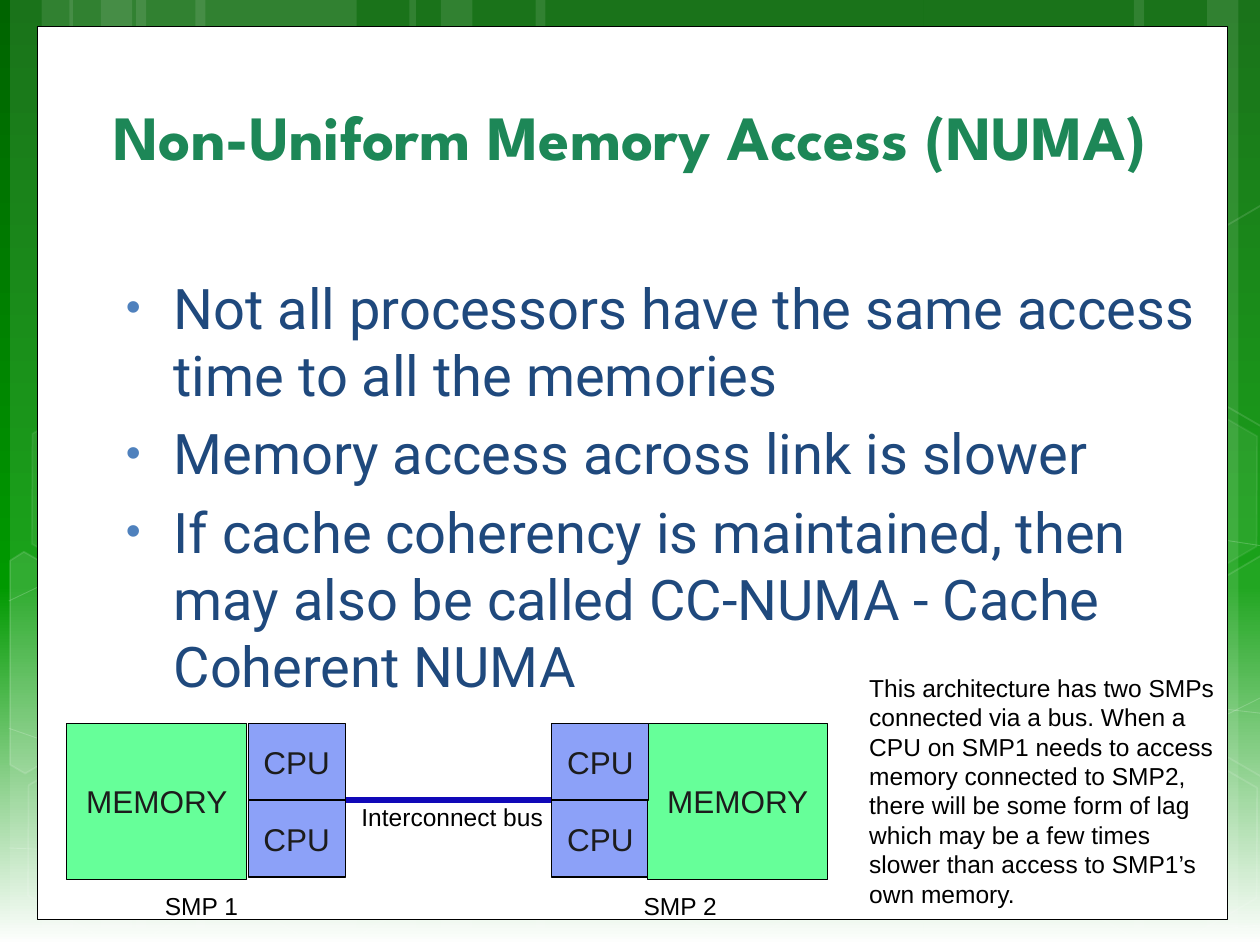
import copy
import pptx
import pptx.dml.color
import pptx.enum.shapes
import pptx.enum.text
import pptx.oxml
import pptx.oxml.ns
import pptx.util

SHAPE = pptx.enum.shapes.MSO_SHAPE
ANCHOR = pptx.enum.text.MSO_ANCHOR
ALIGN = pptx.enum.text.PP_ALIGN
qn = pptx.oxml.ns.qn
CELL = 0.1  # inches; the slide is 100 columns by 75 rows


def unit(count):
    return pptx.util.Inches(count * CELL)


def hue(code):
    return pptx.dml.color.RGBColor.from_string(code)


def node(parent, tag, **attrs):
    child = parent.makeelement(qn(tag), attrs)
    parent.append(child)
    return child


def fade(part, share):
    for color in part.iter(qn("a:srgbClr")):
        node(color, "a:alpha", val=str(share * 1000))


class Board:
    def __init__(self, deck):
        self.slide = deck.slides.add_slide(deck.slide_layouts[6])
        self.shapes = self.slide.shapes

    def ground(self, stops):
        fill = self.slide.background.fill
        fill.gradient()
        fill.gradient_angle = 270
        first = next(self.slide.element.iter(qn("a:gs")))
        first.addnext(copy.deepcopy(first))
        for stop, (place, code) in zip(fill.gradient_stops, stops):
            stop.position = place
            stop.color.rgb = hue(code)

    def style(self, shape, fill=None, line=None, width=0.75, clear=None, edge=None):
        shape.shadow.inherit = False
        if fill:
            shape.fill.solid()
            shape.fill.fore_color.rgb = hue(fill)
        else:
            shape.fill.background()
        if line:
            shape.line.color.rgb = hue(line)
            shape.line.width = pptx.util.Pt(width)
        else:
            shape.line.fill.background()
        props = shape.element.spPr
        if clear:
            fade(props.find(qn("a:solidFill")), clear)
        if edge:
            fade(props.find(qn("a:ln")), edge)
        return shape

    def box(self, x, y, w, h, kind=SHAPE.RECTANGLE, **look):
        shape = self.shapes.add_shape(kind, unit(x), unit(y), unit(w), unit(h))
        return self.style(shape, **look)

    def hexa(self, x, y, clear=None, edge=12):
        shape = self.box(x, y, 17.5, 15.2, SHAPE.HEXAGON, fill=clear and "FFFFFF",
                         line="FFFFFF", width=1, clear=clear, edge=edge)
        shape.adjustments[0] = 0.285
        shape.rotation = 30

    def shard(self, points, clear=None):
        start, *rest = [(unit(x), unit(y)) for x, y in points]
        form = self.shapes.build_freeform(*start)
        form.add_line_segments(rest, close=True)
        self.style(form.convert_to_shape(), fill=clear and "FFFFFF",
                   line="FFFFFF", width=1, clear=clear, edge=12)

    def line(self, x, y, to_x, to_y, color, width, edge=None):
        link = self.shapes.add_connector(
            pptx.enum.shapes.MSO_CONNECTOR.STRAIGHT,
            unit(x), unit(y), unit(to_x), unit(to_y))
        link.line.color.rgb = hue(color)
        link.line.width = pptx.util.Pt(width)
        props = link.element.spPr
        if edge:
            fade(props.find(qn("a:ln")), edge)
        node(props, "a:effectLst")

    def put(self, shape, lines, size, color, font="Arial", bold=False, align=ALIGN.LEFT):
        frame = shape.text_frame
        for place, text in enumerate(lines):
            para = frame.add_paragraph() if place else frame.paragraphs[0]
            para.text = text
            para.alignment = align
            para.font.size = pptx.util.Pt(size)
            para.font.name = font
            para.font.bold = bold
            para.font.color.rgb = hue(color)
        return frame

    def text(self, x, y, w, h, lines, size=14, color="000000", wrap=True,
             anchor=ANCHOR.TOP, **look):
        area = self.shapes.add_textbox(unit(x), unit(y), unit(w), unit(h))
        frame = self.put(area, lines, size, color, **look)
        frame.word_wrap = wrap
        frame.vertical_anchor = anchor
        return frame

    def points(self, x, y, w, h, lines):
        frame = self.text(x, y, w, h, lines, 32, "1F497D", font="Roboto")
        for para in frame.paragraphs:
            para.space_before = pptx.util.Pt(6.4)
            props = para._p.get_or_add_pPr()
            props.set("marL", str(unit(3.8)))
            props.set("indent", str(-unit(3.8)))
            rest = props.find(qn("a:defRPr"))
            node(node(props, "a:buClr"), "a:srgbClr", val="4F81BD")
            node(props, "a:buSzPct", val="76000")
            node(props, "a:buFont", typeface="Arial")
            node(props, "a:buChar", char="•")
            props.append(rest)

    def block(self, x, y, w, h, label, fill):
        shape = self.box(x, y, w, h, fill=fill, line="000000")
        frame = self.put(shape, [label], 18, "1C1C1C", align=ALIGN.CENTER)
        frame.word_wrap = False
        frame.vertical_anchor = ANCHOR.MIDDLE


def main():
    deck = pptx.Presentation()
    deck.slide_width, deck.slide_height = unit(100), unit(75)
    board = Board(deck)

    # Green ground with pale stripes
    board.ground([(0, "006400"), (0.62, "009900"), (1, "FFFFFF")])
    stripes = [(10.8, 17.5), (0.8, 5), (3.3, 8.3), (15.5, 17.5), (5.5, 5), (8, 8.3),
               (73.3, 17.5), (95.8, 5), (90, 8.3), (42.5, 30.8), (32.5, 5), (35, 8.3)]
    for x, w in stripes:
        board.box(x, 0, w, 75, fill="FFFFFF", clear=10)

    # Faint lines and hexagons along the margins
    for x, y, end in [(0.7, 47.7, 46.6), (0.7, 67.3, 67.4), (0.7, 57.8, 58.6)]:
        board.line(x, y, 3, end, "FFFFFF", 0.5, 20)
    for y, end in [(42.9, 43.3), (56.7, 55.4), (56.3, 56.6), (73.7, 73.4)]:
        board.line(97.4, y, 100, end, "FFFFFF", 0.5, 20)
    for x, y, clear, edge in [(49.7, 58.9, 6, 12), (1.1, 59.1, None, 12),
                              (1.4, 31.2, 7, 8), (17.4, 59.2, None, 12),
                              (83.4, 59.3, None, 12), (83.4, 31.4, 7, 8)]:
        board.hexa(x, y, clear, edge)
    board.shard([(0.8, 44.5), (1.9, 43.8), (9.6, 48.2), (9.5, 57),
                 (2, 61.4), (0.8, 60.7)], 10)
    for top, clear in [(44.1, 4), (16.3, None)]:
        board.shard([(92.6, top + 4.4), (100.1, top), (100.9, top + 0.5),
                     (100.9, top + 17.2), (100.2, top + 17.6), (92.6, top + 13.2)], clear)

    # White panel, title and points
    board.box(3, 2.1, 94.4, 70.9, fill="FFFFFF", line="000000", width=0.5)
    board.text(8, 6.6, 84.2, 7.6, ["Non-Uniform Memory Access (NUMA)"], 36, "1D8757",
               anchor=ANCHOR.BOTTOM, font="League Spartan", bold=True)
    board.points(9, 21.2, 87.6, 45.8, [
        "Not all processors have the same access time to all the memories",
        "Memory access across link is slower",
        "If cache coherency is maintained, then may also be called "
        "CC-NUMA - Cache Coherent NUMA"])

    # Two SMPs joined by a bus
    board.line(26, 63.5, 50, 63.5, "1008B8", 3)
    for name, store, chip, label in [("SMP 1", 5.3, 19.7, 12.1), ("SMP 2", 51.4, 43.8, 50.1)]:
        board.block(chip, 63.5, 7.7, 6.1, "CPU", "8CA1F8")
        board.block(store, 57.4, 14.3, 12.4, "MEMORY", "66FF99")
        board.block(chip, 57.4, 7.7, 6.1, "CPU", "8CA1F8")
        board.text(label, 70.2, 7.9, 3.4, [name], wrap=False)
    board.text(27.7, 63.2, 16.5, 3.4, ["Interconnect bus"], wrap=False)

    # Side remark
    board.text(68, 52.9, 30.1, 19.9, [
        "This architecture has two SMPs",
        "connected via a bus. When a CPU on SMP1 needs to access memory connected "
        "to SMP2, there will be some form of lag which may be a few times slower "
        "than access to SMP1’s own memory."])
    deck.save("out.pptx")


if __name__ == "__main__":
    main()
